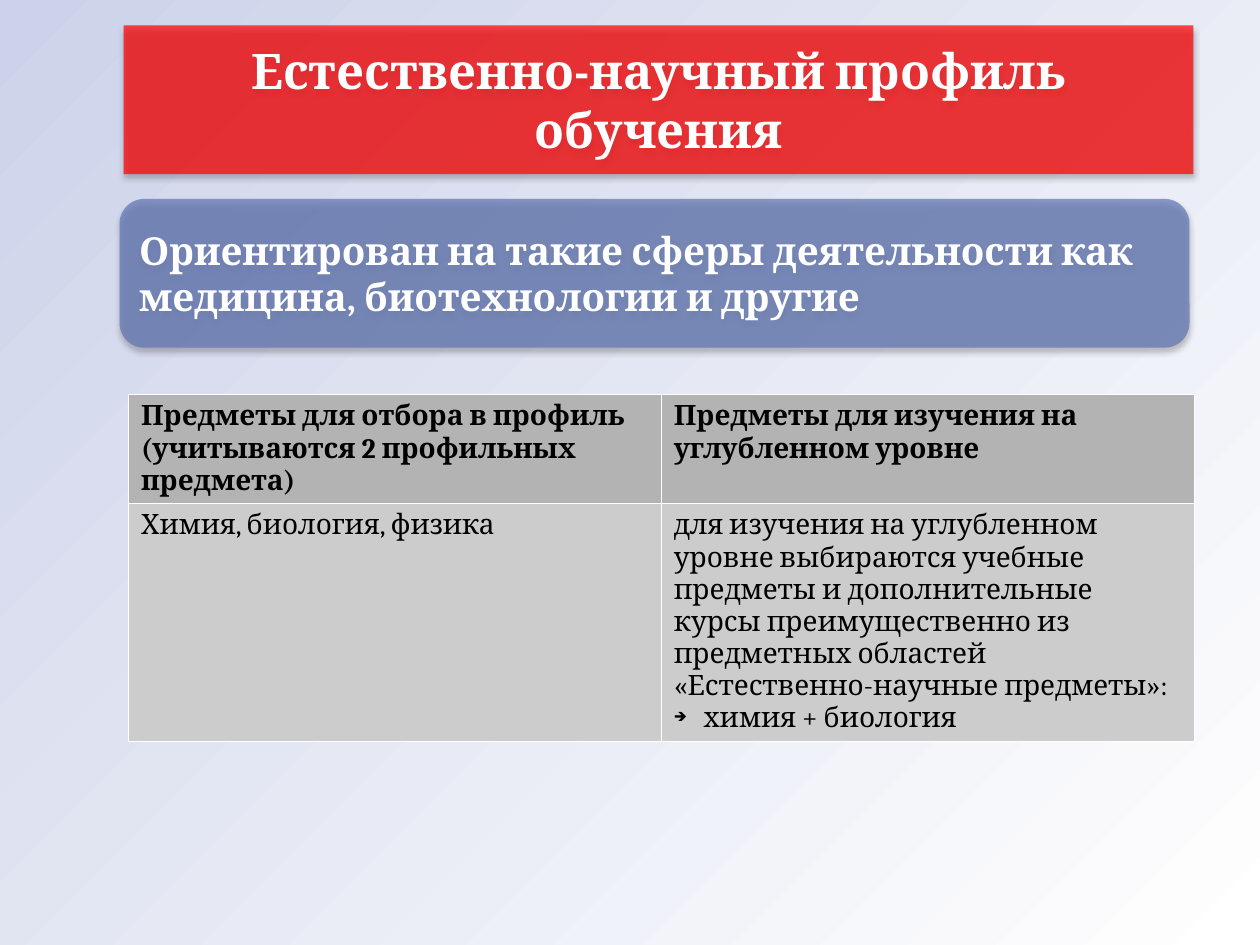
from lxml import etree
from pptx import Presentation
from pptx import util as u
from pptx.dml.color import RGBColor
from pptx.enum import shapes, text
from pptx.oxml import parse_xml
from pptx.oxml.ns import nsdecls, qn

TITLE = "Естественно-научный профиль обучения"
FOCUS = "Ориентирован на такие сферы деятельности как медицина, биотехнологии и другие"
SUBJECTS = [
    [["Предметы для отбора в профиль (учитываются 2 профильных предмета)"],
     ["Предметы для изучения на углубленном уровне"]],
    [["Химия, биология, физика"],
     ["для изучения на углубленном уровне выбираются учебные предметы и дополнительные "
      "курсы преимущественно из предметных областей «Естественно-научные предметы»:",
      "➔химия + биология"]],
]
ARROW = "➔"
THEME = {
    "font": "Cambria", "title": 28, "focus": 22, "table": 16,
    "light": "FFFFFF", "dark": "000000", "red": "FF0000", "blue": "6076B4",
    "head": "B3B3B3", "body": "CCCCCC", "sky": "CCD2E9",
}
BAND_W, BAND_H = 21.57, 3
TITLE_AT, FOCUS_AT = (2.49, 0.51), (2.41, 4.01)
TABLE_AT, COLUMN_W, ROW_H = (2.59, 7.95), 10.74, (1.98, 4.27)


def color(name):
    return RGBColor.from_string(THEME[name])


def apply(target, values):
    for name, value in values.items():
        setattr(target, name, value)


def write(frame, lines, size, ink, bold, align=text.PP_ALIGN.LEFT):
    for index, line in enumerate(lines):
        para = frame.paragraphs[0] if index == 0 else frame.add_paragraph()
        para.alignment = align
        span = para.add_run()
        span.text = line.removeprefix(ARROW)
        apply(span.font, {"name": THEME["font"], "size": u.Pt(THEME[size]), "bold": bold})
        span.font.color.rgb = color(ink)
        if line.startswith(ARROW):
            add_bullet(para)


def add_bullet(para):
    props = para._p.get_or_add_pPr()
    props.set("marL", str(u.Cm(0.6)))
    props.set("indent", str(-u.Cm(0.6)))
    for tag, attrs in (("buSzPct", {"val": "45000"}), ("buChar", {"char": ARROW})):
        etree.SubElement(props, qn(f"a:{tag}"), attrs)


def style_band(box, at, fill, line, size, align):
    apply(box, dict(zip(("left", "top", "width", "height"),
                        map(u.Cm, (*at, BAND_W, BAND_H)))))
    props = box._element.spPr
    if props.find(qn("a:prstGeom")) is None:
        props.append(parse_xml(f'<a:prstGeom {nsdecls("a")} prst="roundRect"><a:avLst/></a:prstGeom>'))
    box.fill.solid()
    box.fill.fore_color.rgb = color(fill)
    etree.SubElement(props.find(".//" + qn("a:srgbClr")), qn("a:alpha"), val="71000")
    box.line.fill.background()
    props.append(parse_xml(
        f'<a:effectLst {nsdecls("a")}><a:outerShdw blurRad="44450" dist="27940" dir="5400000" '
        f'algn="ctr" rotWithShape="0"><a:srgbClr val="{THEME["dark"]}"><a:alpha val="32000"/>'
        '</a:srgbClr></a:outerShdw></a:effectLst>'))
    apply(box.text_frame, {"word_wrap": True, "auto_size": text.MSO_AUTO_SIZE.NONE,
                           "vertical_anchor": text.MSO_ANCHOR.MIDDLE})
    write(box.text_frame, [line], size, "light", True, align)


def style_cell(cell, lines, is_head):
    cell.fill.solid()
    cell.fill.fore_color.rgb = color("head" if is_head else "body")
    write(cell.text_frame, lines, "table", "dark", is_head)
    props = cell._tc.get_or_add_tcPr()
    for index, side in enumerate(("lnL", "lnR", "lnT", "lnB")):
        props.insert(index, parse_xml(
            f'<a:{side} {nsdecls("a")} w="762"><a:solidFill><a:srgbClr val="{THEME["light"]}"/>'
            f'</a:solidFill></a:{side}>'))


def add_subjects(page):
    left, top = map(u.Cm, TABLE_AT)
    table = page.shapes.add_table(len(SUBJECTS), len(SUBJECTS[0]), left, top,
                                  u.Cm(COLUMN_W * 2), u.Cm(sum(ROW_H))).table
    apply(table, {"first_row": False, "horz_banding": False})
    for row_index, row in enumerate(SUBJECTS):
        table.rows[row_index].height = u.Cm(ROW_H[row_index])
        for column_index, lines in enumerate(row):
            style_cell(table.cell(row_index, column_index), lines, row_index == 0)


def main():
    deck = Presentation()
    apply(deck, {"slide_width": u.Cm(25.4), "slide_height": u.Cm(19.05)})
    page = deck.slides.add_slide(deck.slide_layouts.get_by_name("Title Only"))
    backdrop = page.background.fill
    backdrop.gradient()
    backdrop.gradient_angle = 315
    for stop, name, position in zip(backdrop.gradient_stops, ("sky", "light"), (0, 1)):
        stop.color.rgb = color(name)
        stop.position = position
    style_band(page.shapes.title, TITLE_AT, "red", TITLE, "title", text.PP_ALIGN.CENTER)
    add_subjects(page)
    focus = page.shapes.add_shape(shapes.MSO_SHAPE.ROUNDED_RECTANGLE, 0, 0, 0, 0)
    style_band(focus, FOCUS_AT, "blue", FOCUS, "focus", text.PP_ALIGN.LEFT)
    deck.save("out.pptx")


if __name__ == "__main__":
    main()
